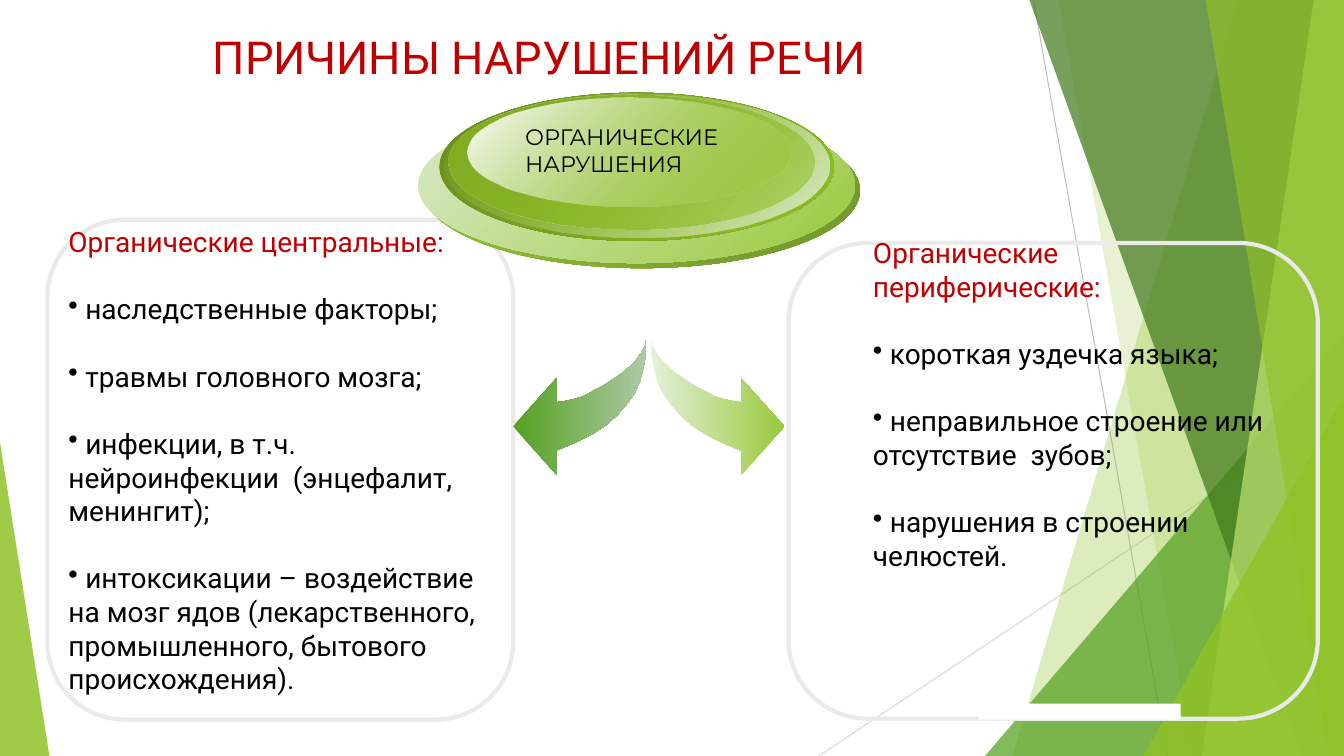
from lxml.etree import SubElement
from pptx import Presentation
from pptx.dml.color import RGBColor as RGB
from pptx.enum.shapes import MSO_CONNECTOR as LINK, MSO_SHAPE as KIND
from pptx.enum.text import MSO_ANCHOR as ANCHOR, PP_ALIGN as ALIGN
from pptx.oxml.ns import qn
from pptx.util import Inches, Pt

WHITE, BLACK = RGB(255, 255, 255), RGB(0, 0, 0)
RED = RGB(0xC0, 0, 0)
GREEN = RGB(0x90, 0xC2, 0x26)
LEAF = RGB(0x54, 0xA0, 0x21)
DARK = RGB(0x3F, 0x78, 0x19)
PALE = RGB(0xC0, 0xE4, 0x74)
LIME = RGB(0x99, 0xCA, 0x3C)
SAGE = RGB(0xAE, 0xCA, 0xA6)
MIST = RGB(0xE5, 0xF0, 0xDA)
OLIVE = RGB(0x70, 0x94, 0x2C)
CREAM = RGB(0xDA, 0xE9, 0xC8)
MOSS = RGB(0x67, 0x8B, 0x1B)
FOAM = RGB(0xE0, 0xEC, 0xD4)
GRASS = RGB(0x82, 0xAF, 0x22)
FRAME = RGB(0xEA, 0xEA, 0xEA)
GREY, SILVER = RGB(0xBF, 0xBF, 0xBF), RGB(0xD9, 0xD9, 0xD9)

WIDE, HIGH = 13.33, 7.5

# Polygons: points, colour, opacity in percent
BANDS_LOW = [
    ([(12.28, 0), (WIDE, 0), (WIDE, HIGH), (10.04, HIGH)], GREEN, 30),
    ([(10.5, 0), (WIDE, 0), (WIDE, HIGH), (11.83, HIGH)], GREEN, 20),
]
BANDS_TOP = [
    ([(10.21, 0), (WIDE, 0), (WIDE, HIGH), (12.91, HIGH)], DARK, 70),
    ([(13.03, 0), (WIDE, 0), (WIDE, HIGH), (11.92, HIGH)], PALE, 70),
    ([(11.96, 0), (WIDE, 0), (WIDE, HIGH), (13.18, HIGH)], GREEN, 65),
]

# Ellipses of the button: box, first and last gradient stop
RINGS = [
    ((4.2, 1.12, 4.33, 1.54), (LIME, 100), (OLIVE, 100)),
    ((4.15, 1.07, 4.33, 1.54), (CREAM, 100), (LIME, 100)),
    ((4.36, 0.92, 3.91, 1.47), (MOSS, 100), (GREEN, 100)),
    ((4.41, 0.93, 3.82, 1.43), (GREEN, 0), (FOAM, 100)),
    ((4.45, 0.94, 3.63, 1.34), (GRASS, 100), (GREEN, 48)),
    ((4.64, 0.97, 3.2, 1.08), (WHITE, 100), (GREEN, 38)),
]

ARROW = [
    (6.41, 3.36), (6.41, 3.51), (6.38, 3.65), (6.35, 3.78), (6.29, 3.91),
    (6.21, 4.02), (6.12, 4.12), (6.01, 4.22), (5.87, 4.31), (5.71, 4.39),
    (5.52, 4.47), (5.52, 4.71), (5.09, 4.23), (5.52, 3.75), (5.52, 3.99),
    (5.6, 3.98), (5.69, 3.96), (5.79, 3.93), (5.88, 3.88), (5.98, 3.83),
    (6.07, 3.77), (6.16, 3.71), (6.24, 3.64), (6.31, 3.57), (6.36, 3.5),
    (6.4, 3.42),
]
MIRROR = 12.87

CENTRAL = [
    " наследственные факторы;",
    " травмы головного мозга;",
    " инфекции, в т.ч. нейроинфекции  (энцефалит, менингит);",
    " интоксикации – воздействие на мозг ядов (лекарственного, "
    "промышленного, бытового происхождения).",
]
OUTER = [
    " короткая уздечка языка;",
    " неправильное строение или отсутствие  зубов;",
    " нарушения в строении челюстей.",
]


def write(para, text, size=20, color=BLACK, font="Roboto", align=ALIGN.LEFT,
          gap=0, bullet=False):
    run = para.add_run()
    run.text = text
    run.font.size, run.font.name = Pt(size), font
    run.font.color.rgb = color
    para.alignment, para.space_before = align, Pt(gap)
    if bullet:
        props = para._p.get_or_add_pPr()
        props.set("marL", "0")
        props.set("indent", "0")
        SubElement(props, qn("a:buChar")).set("char", "•")


class Canvas:
    def __init__(self, slide):
        self.shapes = slide.shapes

    def paint(self, shape, *stops, angle=0):
        """Fill with one (colour, opacity) stop, or a gradient of two."""
        shape.shadow.inherit = False
        shape.line.fill.background()
        fill = shape.fill
        if len(stops) == 1:
            fill.solid()
            fill.fore_color.rgb = stops[0][0]
        else:
            fill.gradient()
            fill.gradient_angle = angle
            for slot, (color, _) in zip(fill.gradient_stops, stops):
                slot.color.rgb = color
        tags = list(shape._element.spPr.iter(qn("a:srgbClr")))
        for tag, (_, alpha) in zip(tags, stops):
            if alpha < 100:
                SubElement(tag, qn("a:alpha")).set("val", str(alpha * 1000))

    def shape(self, kind, box, *stops, angle=0, adjust=None):
        item = self.shapes.add_shape(kind, *map(Inches, box))
        if adjust is not None:
            item.adjustments[0] = adjust
        self.paint(item, *stops, angle=angle)
        return item

    def poly(self, points, *stops):
        first, *rest = [(Inches(x), Inches(y)) for x, y in points]
        pen = self.shapes.build_freeform(*first)
        pen.add_line_segments(rest, close=True)
        self.paint(pen.convert_to_shape(), *stops)

    def line(self, ends, color):
        item = self.shapes.add_connector(LINK.STRAIGHT, *map(Inches, ends))
        item.line.color.rgb, item.line.width = color, Pt(0.75)
        SubElement(item._element.spPr, qn("a:effectLst"))

    def frame(self, box):
        item = self.shapes.add_shape(KIND.ROUNDED_RECTANGLE, *map(Inches, box))
        item.shadow.inherit = False
        item.fill.background()
        item.line.color.rgb, item.line.width = FRAME, Pt(3)

    def text(self, box, items, wrap=True, anchor=ANCHOR.TOP):
        """Add a text box; items are (text, format) pairs, one a paragraph."""
        body = self.shapes.add_textbox(*map(Inches, box)).text_frame
        body.word_wrap, body.vertical_anchor = wrap, anchor
        for i, (words, style) in enumerate(items):
            para = body.add_paragraph() if i else body.paragraphs[0]
            write(para, words, **style)

    def causes(self, box, head, points):
        style = dict(gap=24, bullet=True)
        self.text(box, [(head, dict(color=RED))] + [(p, style) for p in points])


def main():
    deck = Presentation()
    deck.slide_width, deck.slide_height = Inches(WIDE), Inches(HIGH)
    art = Canvas(deck.slides.add_slide(deck.slide_layouts[6]))

    art.line((10.25, 0, 11.58, HIGH), GREY)
    art.line((WIDE, 4.03, 8.12, HIGH), SILVER)
    for points, *stop in BANDS_LOW:
        art.poly(points, stop)
    art.shape(KIND.ISOSCELES_TRIANGLE, (9.77, 3.33, 3.56, 4.17), (LEAF, 72), adjust=1)
    for points, *stop in BANDS_TOP:
        art.poly(points, stop)
    art.shape(KIND.ISOSCELES_TRIANGLE, (11.34, 3.93, 1.99, 3.57), (GREEN, 80), adjust=1)
    art.shape(KIND.ISOSCELES_TRIANGLE, (0, 4.39, 0.49, 3.11), (GREEN, 85), adjust=0)

    title = dict(size=32.4, color=RED, align=ALIGN.CENTER)
    art.text((0.65, 0.24, 9.4, 0.64), [("ПРИЧИНЫ НАРУШЕНИЙ РЕЧИ", title)],
             anchor=ANCHOR.MIDDLE)
    art.frame((7.82, 2.41, 5.25, 4.72))
    art.frame((0.47, 2.18, 4.62, 4.96))
    art.causes((0.58, 2.18, 4.41, 4.81), "Органические центральные:", CENTRAL)

    art.poly(ARROW, (LEAF, 100), (SAGE, 100))
    art.poly([(MIRROR - x, y) for x, y in ARROW], (MIST, 100), (LIME, 100))

    for box, *stops in RINGS:
        art.shape(KIND.OVAL, box, *stops, angle=315)
    label = dict(size=16, font="Montserrat")
    art.text((5.11, 1.17, 2.35, 0.64),
             [("ОРГАНИЧЕСКИЕ", label), ("НАРУШЕНИЯ", label)], wrap=False)

    art.causes((8.56, 2.29, 4.31, 3.74), "Органические периферические:", OUTER)
    art.shape(KIND.RECTANGLE, (9.71, 6.98, 2, 0.16), (WHITE, 100))
    deck.save("out.pptx")


if __name__ == "__main__":
    main()
